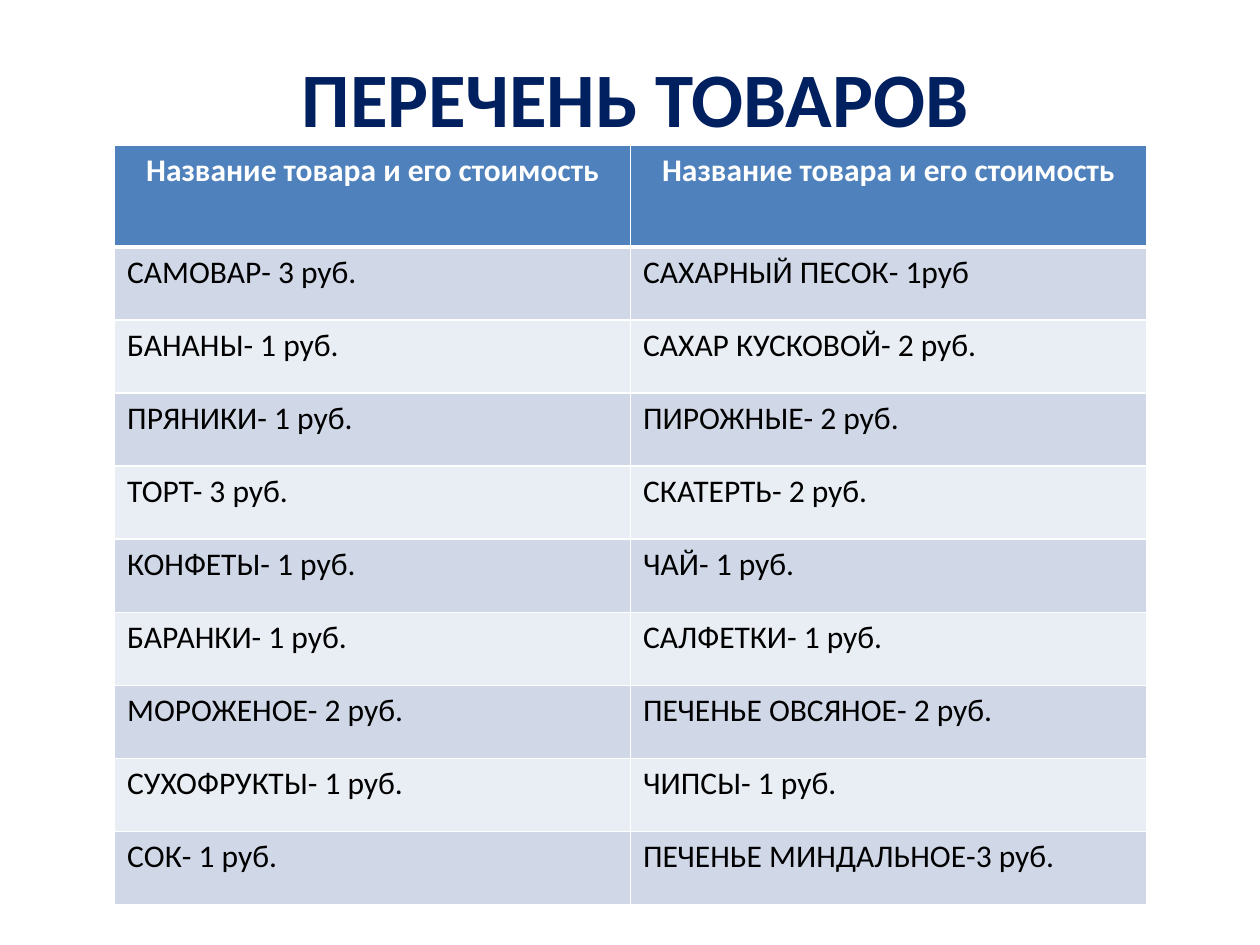
from dataclasses import dataclass

from lxml.etree import SubElement
from pptx import Presentation
from pptx.dml.color import RGBColor
from pptx.enum.text import MSO_ANCHOR, PP_ALIGN
from pptx.oxml.ns import qn
from pptx.util import Inches, Pt


@dataclass(frozen=True)
class Theme:
    font: str = "Calibri"
    title_size: int = 44
    cell_size: int = 18
    title: str = "002060"
    header_fill: str = "4F81BD"
    header_text: str = "FFFFFF"
    body_text: str = "000000"
    bands: tuple = ("D0D8E8", "E9EDF4")
    border: str = "FFFFFF"
    thin: int = 1
    thick: int = 3


THEME = Theme()
HEADING = "Название товара и его стоимость"
GOODS = [
    ("САМОВАР- 3 руб.", "САХАРНЫЙ ПЕСОК- 1руб"),
    ("БАНАНЫ- 1 руб.", "САХАР КУСКОВОЙ- 2 руб."),
    ("ПРЯНИКИ- 1 руб.", "ПИРОЖНЫЕ- 2 руб."),
    ("ТОРТ- 3 руб.", "СКАТЕРТЬ- 2 руб."),
    ("КОНФЕТЫ- 1 руб.", "ЧАЙ- 1 руб."),
    ("БАРАНКИ- 1 руб.", "САЛФЕТКИ- 1 руб."),
    ("МОРОЖЕНОЕ- 2 руб.", "ПЕЧЕНЬЕ ОВСЯНОЕ- 2 руб."),
    ("СУХОФРУКТЫ- 1 руб.", "ЧИПСЫ- 1 руб."),
    ("СОК- 1 руб.", "ПЕЧЕНЬЕ МИНДАЛЬНОЕ-3 руб."),
]


def write(frame, text, size, color, bold, align):
    para = frame.paragraphs[0]
    para.text = text
    para.alignment = align
    para.font.name = THEME.font
    para.font.size = Pt(size)
    para.font.bold = bold
    para.font.color.rgb = RGBColor.from_string(color)


def add_title(page, text):
    box = page.shapes.add_textbox(Inches(0.59), Inches(0.3), Inches(8.91), Inches(0.93))
    frame = box.text_frame
    frame.word_wrap = True
    frame.vertical_anchor = MSO_ANCHOR.MIDDLE
    write(frame, text, THEME.title_size, THEME.title, True, PP_ALIGN.CENTER)


def set_borders(cell, top, bottom):
    """Draw all four edges; top and bottom widths are in points."""
    properties = cell._tc.get_or_add_tcPr()
    widths = {"a:lnL": THEME.thin, "a:lnR": THEME.thin, "a:lnT": top, "a:lnB": bottom}
    for tag, width in widths.items():
        line = SubElement(properties, qn(tag), w=str(Pt(width)))
        fill = SubElement(line, qn("a:solidFill"))
        SubElement(fill, qn("a:srgbClr"), val=THEME.border)


def style_cell(cell, text, row):
    is_header = row == 0
    set_borders(
        cell,
        top=THEME.thick if row == 1 else THEME.thin,
        bottom=THEME.thick if is_header else THEME.thin,
    )
    cell.fill.solid()
    fill = THEME.header_fill if is_header else THEME.bands[(row - 1) % 2]
    cell.fill.fore_color.rgb = RGBColor.from_string(fill)
    color = THEME.header_text if is_header else THEME.body_text
    align = PP_ALIGN.CENTER if is_header else PP_ALIGN.LEFT
    write(cell.text_frame, text, THEME.cell_size, color, is_header, align)


def add_goods_table(page):
    rows = [(HEADING, HEADING), *GOODS]
    table = page.shapes.add_table(
        len(rows), 2, Inches(0.91), Inches(1.15), Inches(8.19), Inches(6.06)
    ).table
    for row, texts in enumerate(rows):
        table.rows[row].height = Inches(0.58 if row else 0.81)
        for column, text in enumerate(texts):
            style_cell(table.cell(row, column), text, row)


def main():
    deck = Presentation()
    deck.slide_width, deck.slide_height = Inches(10), Inches(7.5)
    page = deck.slides.add_slide(deck.slide_layouts[6])
    add_title(page, "ПЕРЕЧЕНЬ ТОВАРОВ")
    add_goods_table(page)
    deck.save("out.pptx")


if __name__ == "__main__":
    main()
